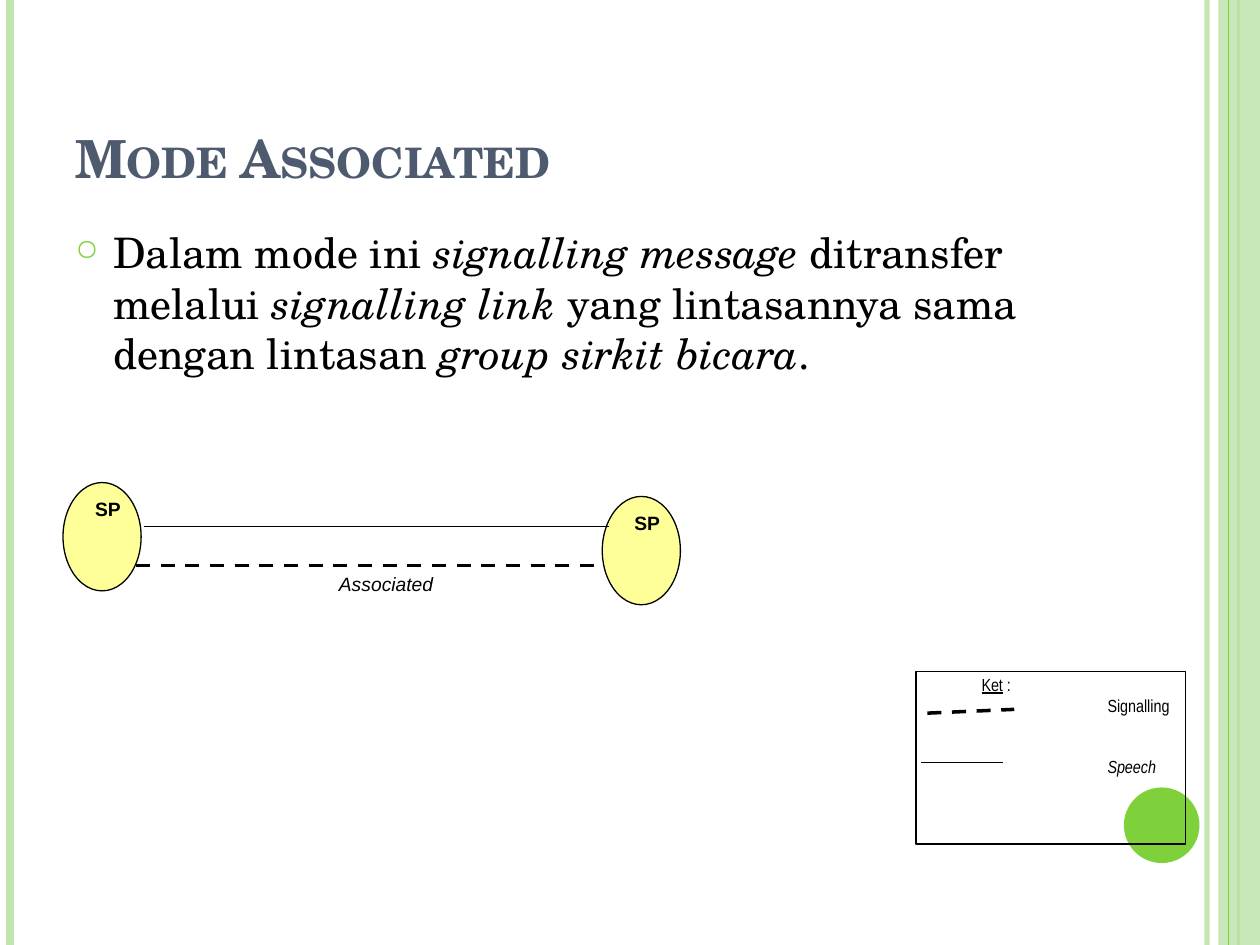
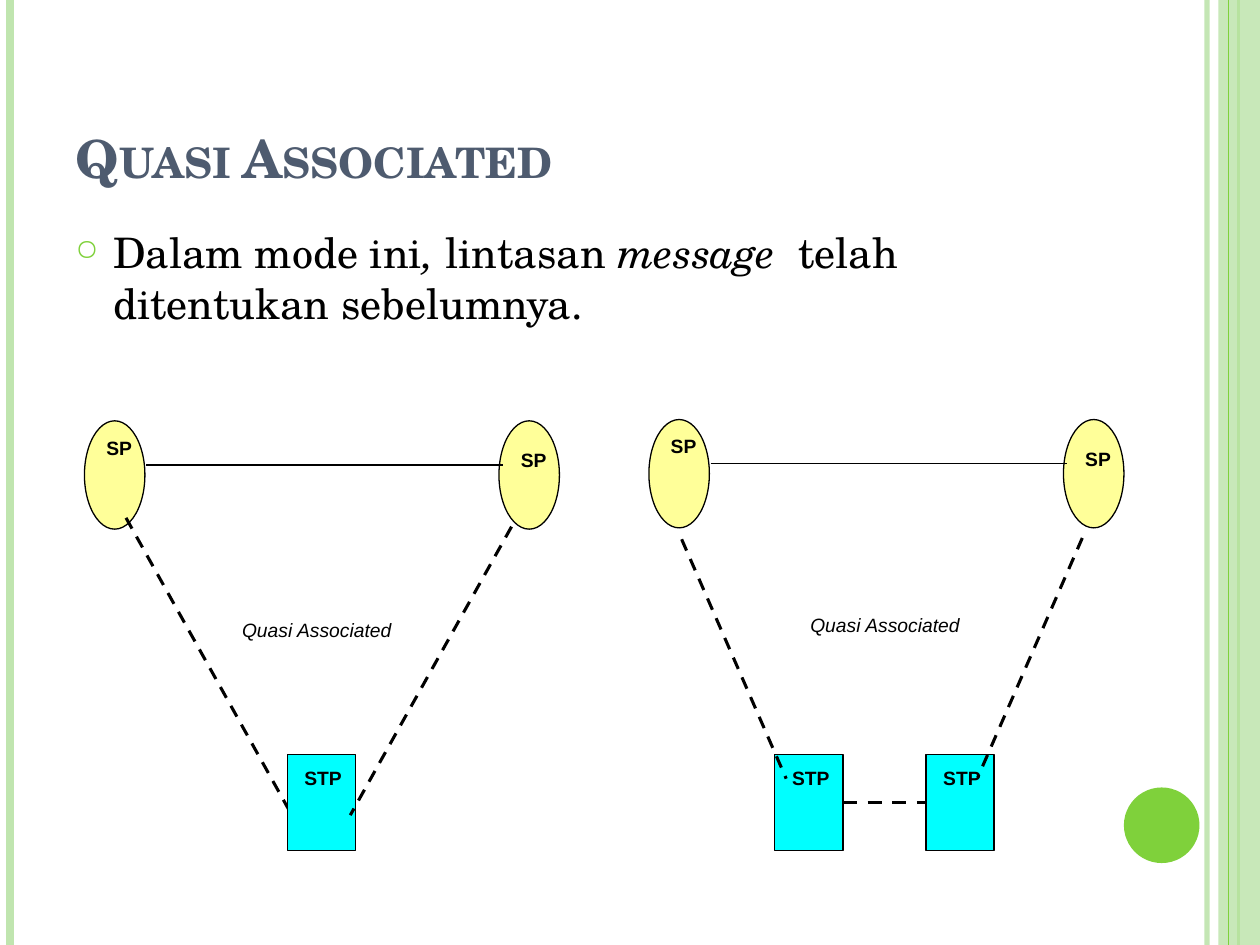
from lxml.etree import SubElement as Sub
from pptx import Presentation
from pptx.dml.color import RGBColor as Rgb
from pptx.enum.dml import MSO_LINE as Dash
from pptx.enum.shapes import MSO_CONNECTOR as Wire, MSO_SHAPE as Form
from pptx.enum.text import MSO_ANCHOR as Anchor, PP_ALIGN as Align
from pptx.oxml.ns import qn
from pptx.util import Inches, Pt

SERIF, SANS, THIN = "TeX Gyre Schola", "Arial", "Arial Narrow"
GREEN, PALE, SLATE = "7FD13B", "C0E5AF", "4E5B6F"
BLACK, YELLOW, CYAN = "000000", "FFFF99", "00FFFF"


def hue(code):
    return Rgb.from_string(code)


def fade(item, part):
    """Make the colours of a shape or line partly transparent."""
    for tag in item.element.spPr.iter(qn("a:srgbClr")):
        Sub(tag, qn("a:alpha"), val=str(part * 1000))


class Deck:
    def __init__(self):
        self.prs = Presentation()
        self.prs.slide_width, self.prs.slide_height = Inches(10), Inches(7.5)
        self.slide = None

    def page(self, title, parts):
        """Start a slide with its side bands, title and bullet."""
        self.slide = self.prs.slides.add_slide(self.prs.slide_layouts[6])
        # Side bands and disc
        fade(self.line(9.58, 0, 9.58, 7.5, 3, PALE), 93)
        self.line(0.08, 0, 0.08, 7.5, 4.5, PALE)
        self.line(9.83, 0, 9.83, 7.5, 1.5, GREEN)
        fade(self.shape(Form.RECTANGLE, 9.67, 0, 0.33, 7.5, PALE, None), 87)
        self.line(9.75, 0, 9.75, 7.5, 0.75, GREEN)
        self.shape(Form.OVAL, 8.92, 6.25, 0.6, 0.6, GREEN, None)
        # Title
        frame = self.box(0.5, 0.3, 8.17, 1.25)
        frame.vertical_anchor = Anchor.BOTTOM
        para = frame.paragraphs[0]
        self.words(para, [(title, "b")], 30, SERIF, SLATE)
        para.runs[0]._r.get_or_add_rPr().set("cap", "small")
        # Bullet
        para = self.box(0.5, 1.75, 8.17, 5.33).paragraphs[0]
        self.words(para, parts, 24, SERIF)
        para.space_before = Pt(6)
        self.dent(para, 0.3, -0.3)
        props = para._p.get_or_add_pPr()
        Sub(Sub(props, qn("a:buClr")), qn("a:srgbClr"), val=GREEN)
        Sub(props, qn("a:buSzPct"), val="70000")
        Sub(props, qn("a:buChar"), char="○")

    def dent(self, para, left, first=0):
        props = para._p.get_or_add_pPr()
        props.set("marL", str(Inches(left)))
        props.set("indent", str(Inches(first)))

    def words(self, para, parts, size, face, tint=BLACK):
        """Fill a paragraph from (text, style) pairs; styles are b, i and u."""
        for text, style in parts:
            run = para.add_run()
            run.text = text
            font = run.font
            font.size, font.name = Pt(size), face
            font.color.rgb = hue(tint)
            font.bold, font.italic = "b" in style, "i" in style
            font.underline = "u" in style

    def pad(self, frame, gap):
        frame.word_wrap = True
        frame.margin_left = frame.margin_right = Inches(gap)
        frame.margin_top = frame.margin_bottom = Inches(gap)

    def box(self, x, y, w, h):
        spot = map(Inches, (x, y, w, h))
        frame = self.slide.shapes.add_textbox(*spot).text_frame
        frame.word_wrap = True
        return frame

    def label(self, text, x, y, w, h, style="b"):
        frame = self.box(x, y, w, h)
        self.pad(frame, 0.02)
        para = frame.paragraphs[0]
        para.alignment = Align.CENTER
        self.words(para, [(text, style)], 11, SANS)

    def shape(self, form, x, y, w, h, fill=None, edge=BLACK):
        item = self.slide.shapes.add_shape(form, *map(Inches, (x, y, w, h)))
        item.shadow.inherit = False
        if fill:
            item.fill.solid()
            item.fill.fore_color.rgb = hue(fill)
        else:
            item.fill.background()
        if edge:
            item.line.color.rgb = hue(edge)
            item.line.width = Pt(0.75)
        else:
            item.line.fill.background()
        return item

    def line(self, x1, y1, x2, y2, width=0.75, tint=BLACK, dash=False):
        ends = map(Inches, (x1, y1, x2, y2))
        item = self.slide.shapes.add_connector(Wire.STRAIGHT, *ends)
        item.line.color.rgb = hue(tint)
        item.line.width = Pt(width)
        if dash:
            item.line.dash_style = Dash.DASH
        Sub(item.element.spPr, qn("a:effectLst"))
        return item

    def signal(self, x1, y1, x2, y2, width=1.75):
        return self.line(x1, y1, x2, y2, width, dash=True)

    def point(self, x, y, w, drop=0.1):
        """Signalling point: an oval with its label."""
        self.shape(Form.OVAL, x, y, w, 0.86, YELLOW)
        self.label("SP", x + 0.15 * w, y + drop, 0.85 * w, 0.66)

    def relay(self, x, y=5.99):
        """Signalling transfer point: a box with its label."""
        item = self.shape(Form.RECTANGLE, x, y, 0.54, 0.76, CYAN)
        self.label("STP", x - 0.05, y + 0.07, 0.67, 0.64)
        return item

    def pair(self, x, y):
        """Two signalling points joined by a speech line."""
        self.point(x, y, 0.48)
        self.point(x + 3.29, y, 0.48, 0.2)
        self.line(x + 0.49, y + 0.35, x + 3.32, y + 0.35)

    def key(self, x, y):
        """Legend of the two line types."""
        frame = self.shape(Form.RECTANGLE, x, y, 2.14, 1.37).text_frame
        self.pad(frame, 0.02)
        frame.vertical_anchor = Anchor.TOP
        rows = [([("Ket", "u"), (" :", "")], 0.5, 0),
                ([("Signalling", "")], 1.5, 0),
                ([("Speech", "i")], 1.5, 22.5)]
        for n, (parts, left, gap) in enumerate(rows):
            para = frame.add_paragraph() if n else frame.paragraphs[0]
            para.alignment = Align.LEFT
            para.space_before = Pt(gap)
            self.dent(para, left)
            self.words(para, parts, 10, THIN)
        self.signal(x + 0.09, y + 0.33, x + 0.78, y + 0.3, 2)
        self.line(x + 0.04, y + 0.72, x + 0.69, y + 0.72)


def main():
    deck = Deck()

    # Associated mode
    deck.page("Mode Associated", [
        ("Dalam mode ini ", ""), ("signalling message ", "i"),
        ("ditransfer melalui ", ""), ("signalling link ", "i"),
        ("yang lintasannya sama dengan lintasan ", ""),
        ("group sirkit bicara", "i"), (".", "")])
    deck.point(0.5, 3.83, 0.62)
    deck.point(4.78, 3.94, 0.62)
    deck.line(1.14, 4.18, 4.83, 4.18)
    deck.signal(1.08, 4.49, 4.79, 4.49, 2)
    deck.label("Associated", 2.18, 4.52, 1.77, 0.65, "i")
    deck.key(7.27, 5.33)

    # Quasi associated mode
    deck.page("Quasi Associated", [
        ("Dalam mode ini", ""), (", ", "i"), ("lintasan ", ""),
        ("message ", "i"), (" telah ditentukan sebelumnya.", "")])

    # One transfer point
    deck.pair(0.67, 3.34)
    deck.label("Quasi Associated", 1.5, 4.89, 2.03, 0.61, "i")
    deck.signal(1, 4.11, 2.3, 6.44)
    deck.relay(2.28)
    deck.signal(4.06, 4.18, 2.78, 6.47)

    # Two transfer points
    deck.pair(5.15, 3.33)
    deck.label("Quasi Associated", 6.01, 4.85, 2.03, 0.61, "i")
    left, right = deck.relay(6.15), deck.relay(7.35)
    deck.signal(5.41, 4.28, 6.24, 6.18)
    deck.signal(8.59, 4.27, 7.76, 6.17)
    link = deck.signal(6.69, 6.37, 7.35, 6.37, 2)
    link.begin_connect(left, 3)
    link.end_connect(right, 1)

    deck.prs.save("out.pptx")


if __name__ == "__main__":
    main()
